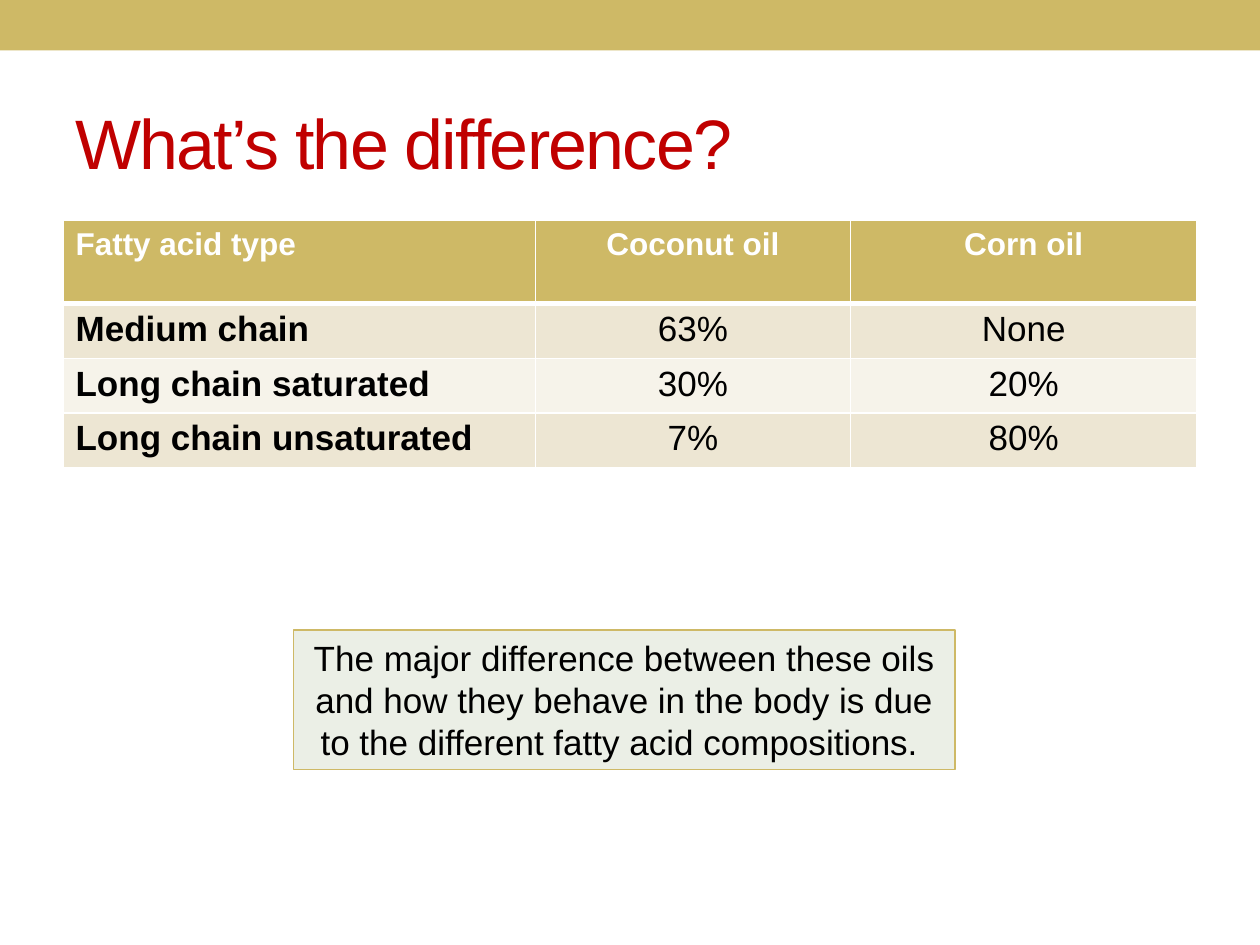
from dataclasses import dataclass

from lxml import etree
from pptx import Presentation
from pptx.dml.color import RGBColor
from pptx.enum.shapes import MSO_SHAPE
from pptx.enum.text import MSO_ANCHOR, PP_ALIGN
from pptx.oxml.ns import qn
from pptx.util import Inches, Pt

RECT = MSO_SHAPE.RECTANGLE
MIDDLE, TOP = MSO_ANCHOR.MIDDLE, MSO_ANCHOR.TOP
LEFT, CENTER = PP_ALIGN.LEFT, PP_ALIGN.CENTER

GOLD = RGBColor(0xCE, 0xB9, 0x66)
SAND = RGBColor(0xED, 0xE6, 0xD3)
CREAM = RGBColor(0xF6, 0xF3, 0xEA)
SAGE = RGBColor(0xEB, 0xEF, 0xE6)
RED = RGBColor(0xC0, 0x00, 0x00)
WHITE = RGBColor(0xFF, 0xFF, 0xFF)
BLACK = RGBColor(0x00, 0x00, 0x00)

HEAD = {"size": Pt(18), "bold": True}
BODY = {"size": Pt(20), "bold": False}
LABEL = {"size": Pt(20), "bold": True}
TITLE = {"size": Pt(40), "bold": False}


@dataclass
class Box:
    left: float
    top: float
    width: float
    height: float

    def place(self) -> tuple:
        return tuple(map(Inches, (self.left, self.top, self.width, self.height)))


@dataclass
class Row:
    texts: tuple
    height: float
    fill: RGBColor
    color: RGBColor = BLACK


ROWS = (
    Row(("Fatty acid type", "Coconut oil", "Corn oil"), 0.66, GOLD, WHITE),
    Row(("Medium chain", "63%", "None"), 0.41, SAND),
    Row(("Long chain saturated", "30%", "20%"), 0.41, CREAM),
    Row(("Long chain unsaturated", "7%", "80%"), 0.41, SAND),
)
WIDTHS = (3.75, 2.5, 2.75)


def write(frame, text: str, style: dict, color: RGBColor, align=LEFT):
    para = frame.paragraphs[0]
    para.alignment = align
    run = para.add_run()
    run.text = text
    for name, value in {"name": "Arial", **style}.items():
        setattr(run.font, name, value)
    run.font.color.rgb = color
    return run


def add_rect(slide, box: Box, fill: RGBColor, line: RGBColor | None = None):
    shape = slide.shapes.add_shape(RECT, *box.place())
    shape.shadow.inherit = False
    shape.fill.solid()
    shape.fill.fore_color.rgb = fill
    if line is None:
        shape.line.fill.background()
    else:
        shape.line.color.rgb = line
        shape.line.width = Pt(0.75)
    return shape


def add_edges(cell, widths: dict) -> None:
    """Draw white cell borders; they must precede the cell fill in the XML."""
    props = cell._tc.get_or_add_tcPr()
    for side, width in widths.items():
        edge = etree.SubElement(props, qn(f"a:ln{side}"), w=str(Pt(width)))
        fill = etree.SubElement(edge, qn("a:solidFill"))
        etree.SubElement(fill, qn("a:srgbClr"), val=str(WHITE))


def add_grid(slide, box: Box) -> None:
    grid = slide.shapes.add_table(len(ROWS), len(WIDTHS), *box.place()).table
    for col, width in zip(grid.columns, WIDTHS):
        col.width = Inches(width)
    for i, row in enumerate(ROWS):
        grid.rows[i].height = Inches(row.height)
        edges = {"L": 1, "R": 1, "T": 3 if i == 1 else 1, "B": 1 if i else 3}
        for j, text in enumerate(row.texts):
            cell = grid.cell(i, j)
            add_edges(cell, edges)
            cell.fill.solid()
            cell.fill.fore_color.rgb = row.fill
            style = HEAD if i == 0 else BODY if j else LABEL
            write(cell.text_frame, text, style, row.color, CENTER if j else LEFT)


def add_title(slide, box: Box, text: str) -> None:
    frame = slide.shapes.add_textbox(*box.place()).text_frame
    frame.word_wrap = True
    frame.vertical_anchor = MIDDLE
    run = write(frame, text, TITLE, RED)
    run.font._element.set("spc", "-100")


def add_note(slide, box: Box, text: str) -> None:
    frame = add_rect(slide, box, SAGE, GOLD).text_frame
    frame.word_wrap = True
    frame.vertical_anchor = TOP
    write(frame, text, BODY, BLACK, CENTER)


def main() -> None:
    deck = Presentation()
    deck.slide_width, deck.slide_height = Inches(10), Inches(7.5)
    slide = deck.slides.add_slide(deck.slide_layouts[6])
    add_rect(slide, Box(0, 0, 10, 0.4), GOLD)
    add_title(slide, Box(0.5, 0.58, 9, 1.08), "What’s the difference?")
    add_grid(slide, Box(0.5, 1.75, sum(WIDTHS), sum(row.height for row in ROWS)))
    add_note(
        slide,
        Box(2.33, 5, 5.25, 1.11),
        "The major difference between these oils and how they behave in the body "
        "is due to the different fatty acid compositions. ",
    )
    deck.save("out.pptx")


if __name__ == "__main__":
    main()
